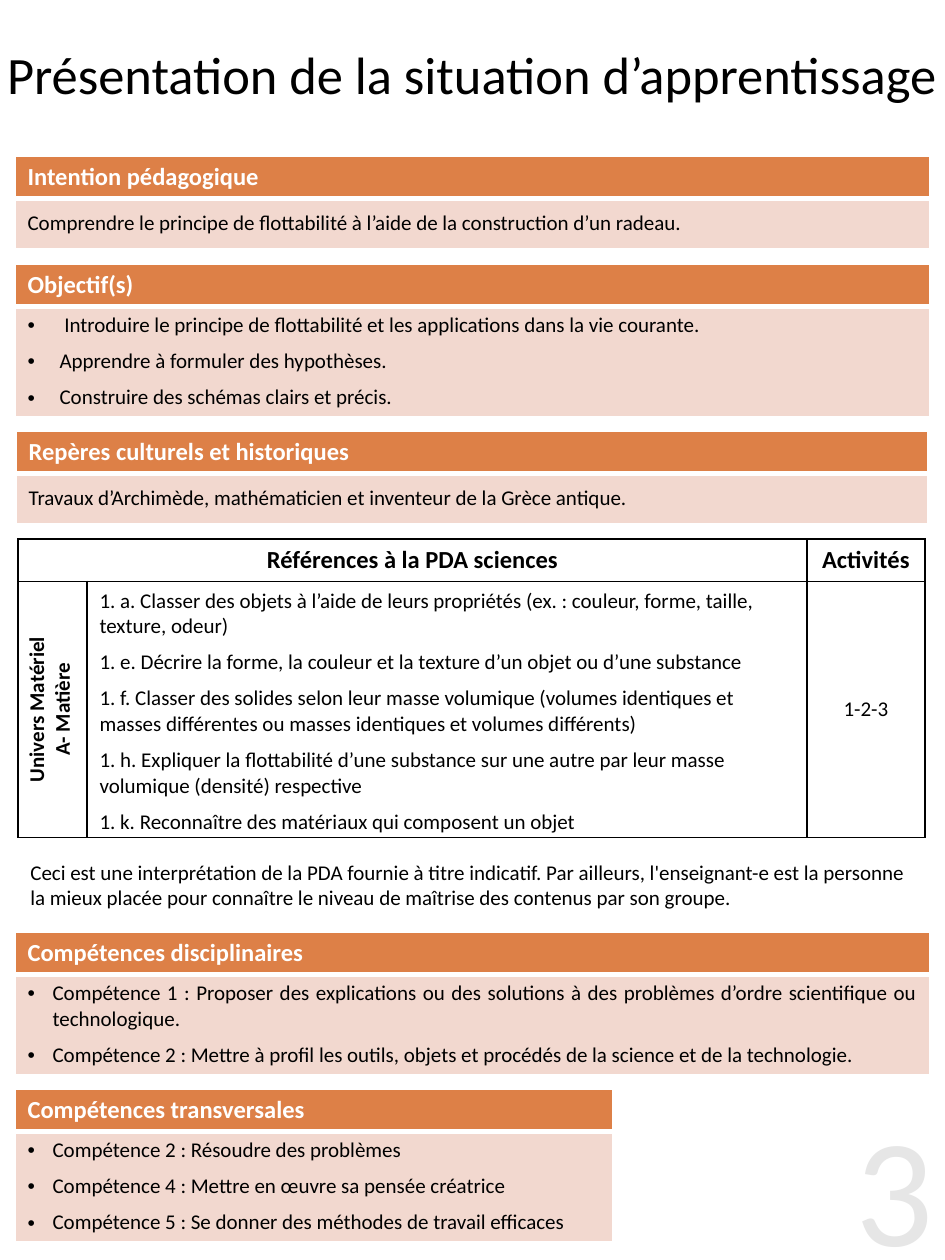
"""Build the overview page of a learning situation about buoyancy."""
from dataclasses import dataclass

from lxml import etree
from pptx import Presentation
from pptx import util as u
from pptx.dml.color import RGBColor
from pptx.enum import text
from pptx.oxml import ns

PX = 914400 / 126


@dataclass(frozen=True)
class Theme:
    font: str = "Calibri"
    black: str = "000000"
    white: str = "FFFFFF"
    orange: str = "DD8047"
    pale: str = "F2D8CF"
    grey: str = "E6E6E6"
    title: int = 30
    heading: int = 14
    body: int = 12
    number: int = 88


THEME = Theme()
LEFT, CENTER, RIGHT, JUSTIFY = (
    text.PP_ALIGN.LEFT, text.PP_ALIGN.CENTER, text.PP_ALIGN.RIGHT, text.PP_ALIGN.JUSTIFY)
MIDDLE = text.MSO_ANCHOR.MIDDLE
HEADER_HEIGHT = 42

TITLE = "Présentation de la situation d’apprentissage"
SECTIONS = [
    dict(heading="Intention pédagogique", box=(15, 156, 915, 92), align=JUSTIFY, indent=0,
         lines=["Comprendre le principe de flottabilité à l’aide de la construction d’un radeau."]),
    dict(heading="Objectif(s)", box=(15, 264, 915, 152), align=LEFT, indent=32,
         lines=[" Introduire le principe de flottabilité et les applications dans la vie courante.",
                "Apprendre à formuler des hypothèses.",
                "Construire des schémas clairs et précis."]),
    dict(heading="Repères culturels et historiques", box=(16, 431, 912, 92), align=JUSTIFY, indent=0,
         lines=["Travaux d’Archimède, mathématicien et inventeur de la Grèce antique."]),
    dict(heading="Compétences disciplinaires", box=(15, 932, 915, 141), align=JUSTIFY, indent=25,
         lines=["Compétence 1 : Proposer des explications ou des solutions à des problèmes "
                "d’ordre scientifique ou technologique.",
                "Compétence 2 : Mettre à profil les outils, objets et procédés de la science "
                "et de la technologie."]),
    dict(heading="Compétences transversales", box=(15, 1089, 598, 151), align=LEFT, indent=25,
         lines=["Compétence 2 : Résoudre des problèmes",
                "Compétence 4 : Mettre en œuvre sa pensée créatrice",
                "Compétence 5 : Se donner des méthodes de travail efficaces"]),
]
REFERENCES_BOX = (18, 539, 907, 298)
REFERENCES_COLUMNS = (69, 720, 118)
REFERENCES_HEADINGS = {0: "Références à la PDA sciences", 2: "Activités"}
UNIVERSE = ["Univers Matériel", "A- Matière"]
REFERENCES = [
    "1. a. Classer des objets à l’aide de leurs propriétés (ex. : couleur, forme, taille, texture, odeur)",
    "1. e. Décrire la forme, la couleur et la texture d’un objet ou d’une substance",
    "1. f. Classer des solides selon leur masse volumique (volumes identiques et masses différentes "
    "ou masses identiques et volumes différents)",
    "1. h. Expliquer la flottabilité d’une substance sur une autre par leur masse volumique "
    "(densité) respective",
    "1. k. Reconnaître des matériaux qui composent un objet",
]
ACTIVITIES = ["1-2-3"]
NOTE = ("Ceci est une interprétation de la PDA fournie à titre indicatif. Par ailleurs, "
        "l'enseignant-e est la personne la mieux placée pour connaître le niveau de maîtrise "
        "des contenus par son groupe.")


def px(value):
    return u.Emu(round(value * PX))


def set_all(target, values):
    for name, value in values.items():
        setattr(target, name, value)


def write(frame, lines, size=THEME.body, color=THEME.black, bold=False,
          align=LEFT, indent=0, after=0):
    for index, line in enumerate(lines):
        paragraph = frame.paragraphs[0] if index == 0 else frame.add_paragraph()
        set_all(paragraph, dict(alignment=align, space_after=u.Pt(after)))
        if indent:
            properties = paragraph._p.get_or_add_pPr()
            properties.set("marL", str(px(indent)))
            properties.set("indent", str(-px(indent)))
            etree.SubElement(properties, ns.qn("a:buFont"), typeface="Arial")
            etree.SubElement(properties, ns.qn("a:buChar"), char="•")
        run = paragraph.add_run()
        run.text = line
        set_all(run.font, dict(name=THEME.font, size=u.Pt(size), bold=bold))
        run.font.color.rgb = RGBColor.from_string(color)


def style_cell(cell, color, borders, fill=None):
    cell.vertical_anchor = MIDDLE
    properties = cell._tc.get_or_add_tcPr()
    for side, width in borders.items():
        line = etree.SubElement(properties, ns.qn(f"a:ln{side}"), w=str(u.Pt(width)))
        solid = etree.SubElement(line, ns.qn("a:solidFill"))
        etree.SubElement(solid, ns.qn("a:srgbClr"), val=color)
    if fill:
        cell.fill.solid()
        cell.fill.fore_color.rgb = RGBColor.from_string(fill)
    else:
        cell.fill.background()


def add_table(slide, box, columns):
    table = slide.shapes.add_table(2, len(columns), *map(px, box)).table
    table.horz_banding = False
    for column, width in zip(table.columns, columns):
        column.width = px(width)
    for row, height in zip(table.rows, (HEADER_HEIGHT, box[3] - HEADER_HEIGHT)):
        row.height = px(height)
    return table


def add_section(slide, heading, box, align, indent, lines):
    table = add_table(slide, box, [box[2]])
    header, body = table.cell(0, 0), table.cell(1, 0)
    write(header.text_frame, [heading], THEME.heading, THEME.white, True)
    write(body.text_frame, lines, align=align, indent=indent, after=6 if indent else 0)
    style_cell(header, THEME.white, dict(L=1, R=1, T=1, B=3), THEME.orange)
    style_cell(body, THEME.white, dict(L=1, R=1, B=1), THEME.pale)


def add_references(slide):
    table = add_table(slide, REFERENCES_BOX, REFERENCES_COLUMNS)
    table.cell(0, 0).merge(table.cell(0, 1))
    for column, heading in REFERENCES_HEADINGS.items():
        write(table.cell(0, column).text_frame, [heading], THEME.heading, bold=True, align=CENTER)
    universe, references, activities = (table.cell(1, column) for column in range(3))
    write(universe.text_frame, UNIVERSE, bold=True, align=CENTER)
    write(references.text_frame, REFERENCES, after=6)
    write(activities.text_frame, ACTIVITIES, align=CENTER)
    universe._tc.get_or_add_tcPr().set("vert", "vert270")
    references.margin_bottom = px(2)
    for cell in table.iter_cells():
        style_cell(cell, THEME.black, dict(L=1, R=1, T=1, B=1))


def add_text(slide, box, line, margins, **formats):
    frame = slide.shapes.add_textbox(*map(px, box)).text_frame
    frame.word_wrap = True
    set_all(frame, margins)
    write(frame, [line], **formats)


def main():
    presentation = Presentation()
    set_all(presentation, dict(slide_width=px(945), slide_height=px(1260)))
    slide = presentation.slides.add_slide(presentation.slide_layouts[5])
    title = slide.shapes.title
    set_all(title, dict(left=px(-19), top=px(30), width=px(982), height=px(88)))
    title.text_frame.vertical_anchor = MIDDLE
    write(title.text_frame, [TITLE], THEME.title, align=CENTER)
    for section in SECTIONS:
        add_section(slide, **section)
    add_references(slide)
    add_text(slide, (18, 853, 908, 63), NOTE, {})
    flush = dict.fromkeys(("margin_left", "margin_right", "margin_top", "margin_bottom"), 0)
    add_text(slide, (834, 1093, 100, 160), "3", flush,
             size=THEME.number, color=THEME.grey, align=RIGHT)
    presentation.save("out.pptx")


if __name__ == "__main__":
    main()
